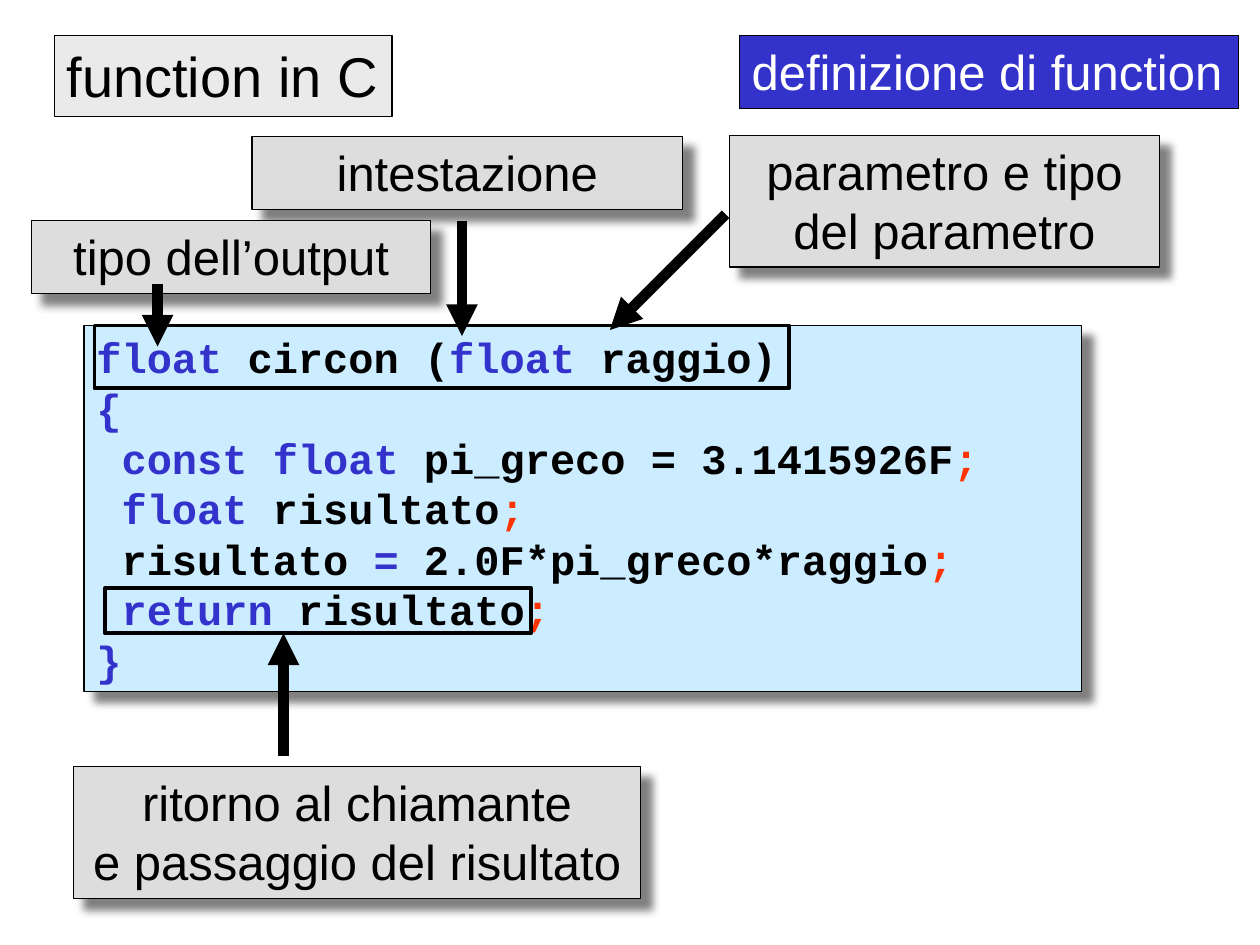
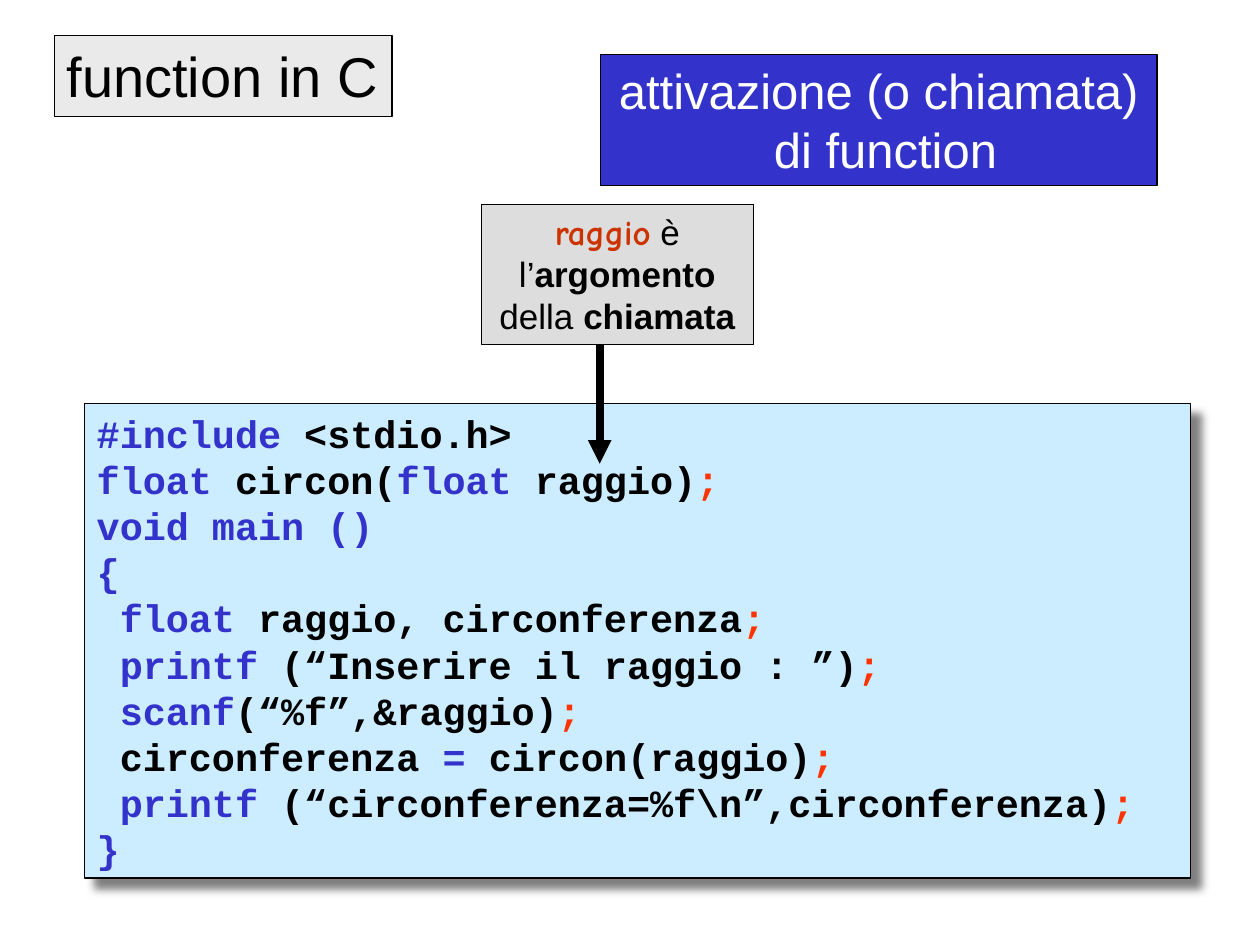
import pptx
import pptx.dml.color
import pptx.enum.shapes
import pptx.enum.text
import pptx.oxml
import pptx.util
from lxml import etree

Pt = pptx.util.Pt
BLACK, BLUE, RED, WHITE = "000000", "3333CC", "FF3300", "FFFFFF"
GREY, PALE, SKY, RUST = "DDDDDD", "EAEAEA", "CCECFF", "CC3300"
HUES = {"k": BLUE, "n": BLACK, "s": RED}  # keyword, name, semicolon
NS = 'xmlns:a="http://schemas.openxmlformats.org/drawingml/2006/main"'

# Content: code lines as (hue, text) runs
END = ("s", ";")
DEF = [
    [("k", "float"), ("n", " circon ("), ("k", "float"), ("n", " raggio)")],
    [("k", "{")],
    [("k", " const float "), ("n", "pi_greco = 3.1415926F"), END],
    [("k", " float"), ("n", " risultato"), END],
    [("n", " risultato "), ("k", "= "), ("n", "2.0F*pi_greco*raggio"), END],
    [("k", " return "), ("n", "risultato"), END],
    [("k", "}")],
]
CALL = [
    [("k", "#include"), ("n", " <stdio.h>")],
    [("k", "float"), ("n", " circon("), ("k", "float"), ("n", " raggio)"), END],
    [("k", "void main ()")],
    [("k", "{")],
    [("k", " float"), ("n", " raggio, circonferenza"), END],
    [("k", " printf "), ("n", "(“Inserire il raggio : ”)"), END],
    [("k", " scanf"), ("n", "(“%f”,&raggio)"), END],
    [("n", " circonferenza "), ("k", "= "), ("n", "circon(raggio)"), END],
    [("k", " printf "), ("n", "(“circonferenza=%f\\n”,circonferenza)"), END],
    [("k", "}")],
]

# Notes: lines, box, arrow (from, to), frame around the code it explains
NOTES = [
    (["intestazione"], (144, 78, 246, 41.8),
     (264, 126, 264, 192), (54, 186, 396.7, 36)),
    (["tipo dell’output"], (18, 126, 228, 41.8), (90, 162, 90, 198), None),
    (["parametro e tipo del parametro"], (416.7, 77.3, 246, 75.3),
     (414.7, 122.4, 348.5, 188.6), None),
    (["ritorno al chiamante", "e passaggio del risultato"],
     (42, 438, 324, 75.3), (162, 432, 162, 362), (60, 336, 243.3, 26)),
]
HINT = [("raggio", "Comic Neue", RUST, True), (" è l’", "Arial", BLACK, False),
        ("argomento", "Arial", BLACK, True), (" della ", "Arial", BLACK, False),
        ("chiamata", "Arial", BLACK, True)]


def rgb(hue):
    return pptx.dml.color.RGBColor.from_string(hue)


def rect(slide, box, fill=None, width=0.75, shade=False):
    shape = slide.shapes.add_shape(
        pptx.enum.shapes.MSO_SHAPE.RECTANGLE, *map(Pt, box))
    shape.shadow.inherit = False
    if fill:
        shape.fill.solid()
        shape.fill.fore_color.rgb = rgb(fill)
    else:
        shape.fill.background()
    shape.line.color.rgb = rgb(BLACK)
    shape.line.width = Pt(width)
    if shade:
        effect = shape._element.spPr.find(pptx.oxml.ns.qn("a:effectLst"))
        effect.append(etree.fromstring(
            f'<a:outerShdw {NS} blurRad="{Pt(5)}" dist="{Pt(8.5)}" dir="2700000" '
            'algn="ctr" rotWithShape="0"><a:srgbClr val="808080"/></a:outerShdw>'))
    return shape


def write(shape, lines, size, center=False, wrap=True):
    """Fill a shape with lines of (text, font, hue, bold) runs."""
    frame = shape.text_frame
    frame.word_wrap = wrap
    frame.vertical_anchor = pptx.enum.text.MSO_ANCHOR.TOP
    frame.margin_left = frame.margin_right = Pt(7.2)
    frame.margin_top = frame.margin_bottom = Pt(3.6)
    align = pptx.enum.text.PP_ALIGN
    for i, line in enumerate(lines):
        para = frame.add_paragraph() if i else frame.paragraphs[0]
        para.alignment = align.CENTER if center else align.LEFT
        para.line_spacing = Pt(size * 1.2)
        for text, font, hue, bold in line:
            run = para.add_run()
            run.text = text
            run.font.name, run.font.size, run.font.bold = font, Pt(size), bold
            run.font.color.rgb = rgb(hue)


def label(slide, lines, box, fill, hue=BLACK, size=28, center=True, shade=False):
    shape = rect(slide, box, fill, shade=shade)
    write(shape, [[(line, "Arial", hue, False)] for line in lines],
          size, center, wrap=center)


def code(slide, lines, box, size):
    runs = [[(text, "Courier New", HUES[key], True) for key, text in line]
            for line in lines]
    write(rect(slide, box, SKY, shade=True), runs, size)


def arrow(slide, ends, width):
    line = slide.shapes.add_connector(
        pptx.enum.shapes.MSO_CONNECTOR.STRAIGHT, *map(Pt, ends))
    line.line.color.rgb = rgb(BLACK)
    line.line.width = Pt(width)
    line.line._get_or_add_ln().append(
        etree.fromstring(f'<a:tailEnd {NS} type="triangle"/>'))
    line._element.spPr.append(etree.fromstring(f"<a:effectLst {NS}/>"))


def title(slide):
    label(slide, ["function in C"], (31, 20.2, 193, 46.3), PALE,
          size=32, center=False)


def main():
    deck = pptx.Presentation()
    deck.slide_width, deck.slide_height = Pt(720), Pt(540)
    first, second = (deck.slides.add_slide(deck.slide_layouts[6])
                     for _ in range(2))

    # Definition of the function
    code(first, DEF, (48, 186, 570, 209.3), 24)
    for lines, box, ends, frame in NOTES:
        label(first, lines, box, GREY, shade=True)
        arrow(first, ends, 6)
        if frame:
            rect(first, frame, width=2.25)
    title(first)
    label(first, ["definizione di function"], (422.4, 20.2, 285.2, 41.8),
          BLUE, WHITE, center=False)

    # Call of the function
    title(second)
    label(second, ["attivazione (o chiamata)", " di function"],
          (343, 31, 318.2, 75), BLUE, WHITE)
    code(second, CALL, (48.2, 230.5, 632.2, 271.3), 22)
    arrow(second, (342.7, 196, 342.7, 265), 4.5)
    write(rect(second, (275, 116.8, 155.6, 80), GREY), [HINT], 20, center=True)

    deck.save("out.pptx")


if __name__ == "__main__":
    main()
